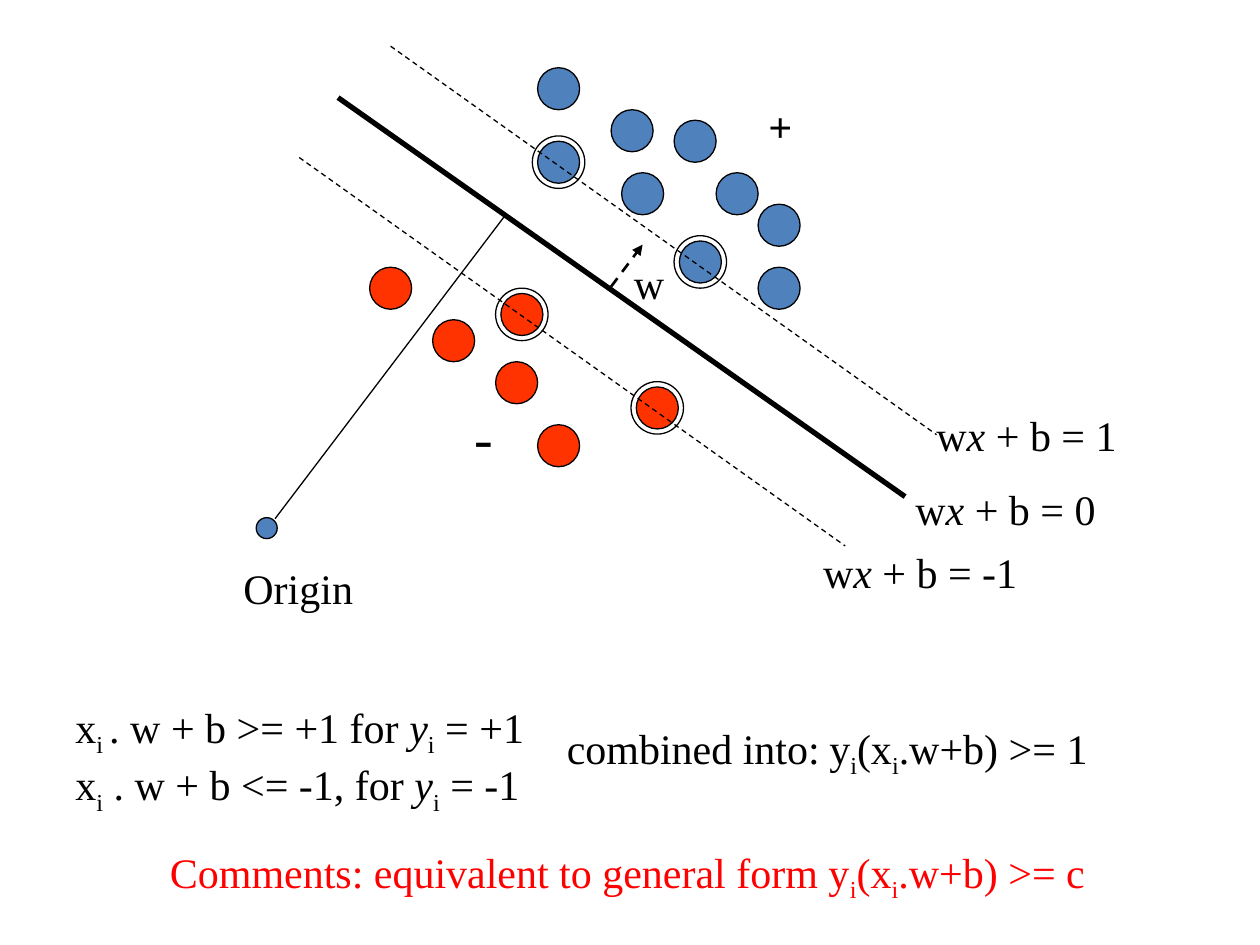
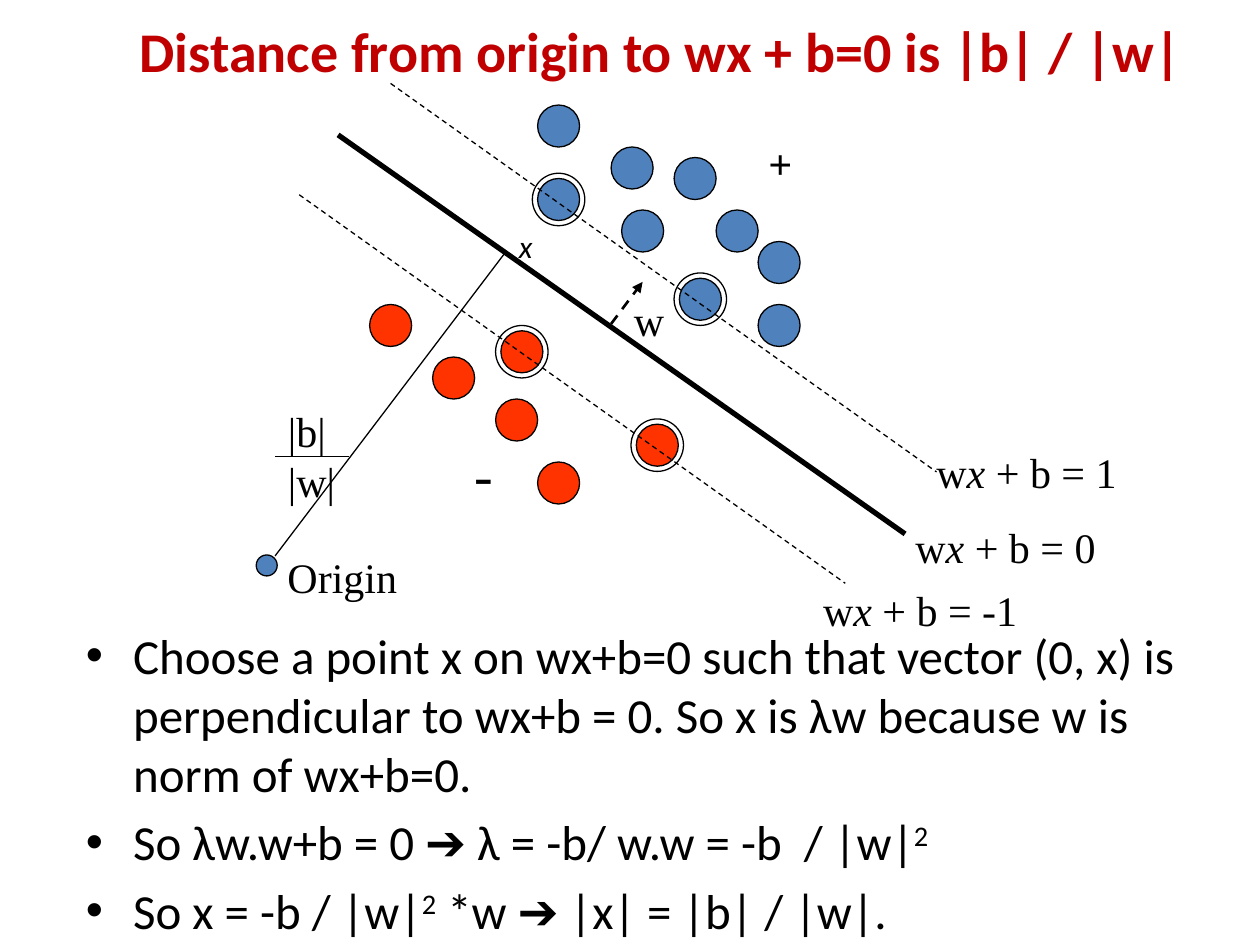
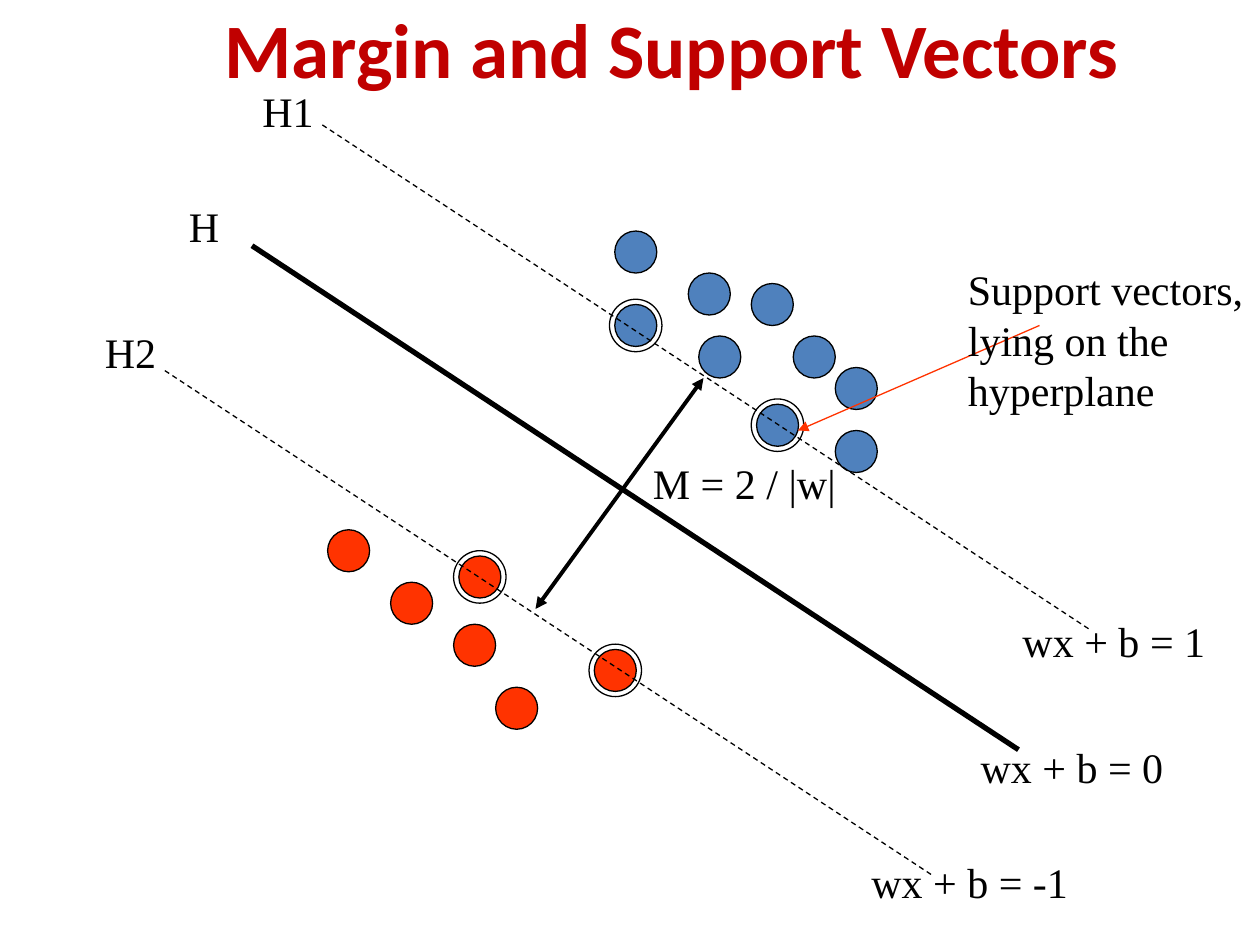
from dataclasses import dataclass
from typing import NamedTuple

from lxml import etree
from pptx import Presentation
from pptx.dml.color import RGBColor
from pptx.enum.dml import MSO_LINE
from pptx.enum.shapes import MSO_CONNECTOR, MSO_SHAPE
from pptx.enum.text import MSO_ANCHOR, MSO_AUTO_SIZE, PP_ALIGN
from pptx.oxml.ns import qn
from pptx.util import Inches, Pt

DASH = MSO_LINE.DASH
OVAL = MSO_SHAPE.OVAL
STRAIGHT = MSO_CONNECTOR.STRAIGHT
TOP, MIDDLE = MSO_ANCHOR.TOP, MSO_ANCHOR.MIDDLE
FIT, FIXED = MSO_AUTO_SIZE.SHAPE_TO_FIT_TEXT, MSO_AUTO_SIZE.NONE
LEFT, CENTER = PP_ALIGN.LEFT, PP_ALIGN.CENTER

# The slide is a grid of 120 columns by 90 rows
COLS, ROWS = 120, 90
WIDTH, HEIGHT = Inches(10), Inches(7.5)
DOT, RING, SPOT = 4, 5, 2
TITLE_ONLY, BLANK = 5, 6


@dataclass(frozen=True)
class Theme:
    ink: str = "000000"
    blue: str = "4F81BD"
    red: str = "FF3300"
    note: str = "FF0000"
    title: str = "C00000"
    serif: str = "Times New Roman"
    sans: str = "Calibri"
    small: float = 18
    label: float = 24
    body: float = 28
    large: float = 32
    head: float = 44
    thin: float = 0.75
    thick: float = 3


THEME = Theme()


class Point(NamedTuple):
    x: float
    y: float
    ringed: bool = False


class Label(NamedTuple):
    text: str
    x: float
    y: float
    w: float
    h: float = 6
    size: float = THEME.label
    font: str = THEME.serif
    color: str = THEME.ink
    bold: bool = False


class Line(NamedTuple):
    x: float
    y: float
    dx: float
    dy: float
    width: float = THEME.thin
    color: str = THEME.ink
    dash: bool = False
    ends: tuple = ()


# Both classes of points, each from the left top of its cloud
BLUES = [Point(0, 0), Point(0, 7, True), Point(7, 4), Point(13, 5), Point(8, 10),
         Point(17, 10), Point(13.5, 16.5, True), Point(21, 13), Point(21, 19)]
REDS = [Point(12.5, 2.5, True), Point(25.4, 11.4, True), Point(12, 9),
        Point(16, 15), Point(6, 5), Point(0, 0)]

# The diagram of the first two slides
PLANE_LINES = [
    Line(32.2, 9.3, 54, 38, width=THEME.thick),
    Line(58.2, 27.3, 3, -4, width=1.5, dash=True, ends=("tailEnd",)),
    Line(37.2, 4.4, 52, 37, dash=True),
    Line(28.5, 15, 52, 37, dash=True),
    Line(26.2, 49.4, 22, -29),
]
PLANE_LABELS = [
    Label("w", 59.2, 23.9, 5.3),
    Label("w`/x` + b = 0", 86, 45.5, 20),
    Label("w`/x` + b = 1", 88, 38.4, 20),
    Label("w`/x` + b = -1", 77.2, 51.5, 21),
    Label("+", 72, 9, 4.7, bold=True),
    Label("-", 44, 37.7, 4.2, 7.5, size=THEME.large),
]


def col(n: float) -> int:
    return round(WIDTH * n / COLS)


def row(n: float) -> int:
    return round(HEIGHT * n / ROWS)


def frame(x: float, y: float, w: float, h: float) -> tuple:
    return col(x), row(y), col(w), row(h)


# Text: `_sub`, `^super` and `/italic` mark a part
def write(para, text: str, *, size: float = THEME.label, font: str = THEME.serif,
          color: str = THEME.ink, bold: bool = False, align=LEFT) -> None:
    para.alignment = align
    for n, part in enumerate(text.split("`")):
        mark, part = (part[0], part[1:]) if n % 2 else ("", part)
        if not part:
            continue
        run = para.add_run()
        run.text = part
        face = run.font
        face.size, face.name, face.bold = Pt(size), font, bold
        face.italic = mark == "/"
        face.color.rgb = RGBColor.from_string(color)
        if mark in ("_", "^"):
            shift = "-25000" if mark == "_" else "30000"
            run._r.get_or_add_rPr().set("baseline", shift)


def add_label(slide, item: Label, drop: float = 0) -> None:
    box = slide.shapes.add_textbox(*frame(item.x, item.y + drop, item.w, item.h))
    area = box.text_frame
    area.word_wrap, area.auto_size = False, FIT
    for n, text in enumerate(item.text.split("\n")):
        para = area.add_paragraph() if n else area.paragraphs[0]
        write(para, text, size=item.size, font=item.font, color=item.color,
              bold=item.bold)


def add_title(slide, text: str, place: tuple, *, size: float, align, anchor,
              wrap: bool) -> None:
    title = slide.shapes.title
    title.left, title.top, title.width, title.height = frame(*place)
    area = title.text_frame
    area.word_wrap, area.auto_size, area.vertical_anchor = wrap, FIXED, anchor
    write(area.paragraphs[0], text, size=size, font=THEME.sans,
          color=THEME.title, bold=True, align=align)


def add_list(slide, lines: list[str], place: tuple) -> None:
    area = slide.shapes.add_textbox(*frame(*place)).text_frame
    area.word_wrap = True
    for n, text in enumerate(lines):
        para = area.add_paragraph() if n else area.paragraphs[0]
        para.space_before = Pt(THEME.body * 0.2)
        write(para, text, size=THEME.body, font=THEME.sans)
        props = para._p.get_or_add_pPr()
        props.set("marL", str(col(4.5)))
        props.set("indent", str(-col(4.5)))
        etree.SubElement(props, qn("a:buFont")).set("typeface", "Arial")
        etree.SubElement(props, qn("a:buChar")).set("char", "•")


# Shapes
def add_disc(slide, x: float, y: float, size: float, fill: str = "") -> None:
    disc = slide.shapes.add_shape(OVAL, *frame(x, y, size, size))
    disc.shadow.inherit = False
    if fill:
        disc.fill.solid()
        disc.fill.fore_color.rgb = RGBColor.from_string(fill)
    else:
        disc.fill.background()
    disc.line.color.rgb = RGBColor.from_string(THEME.ink)
    disc.line.width = Pt(THEME.thin)


def add_cloud(slide, points: list[Point], x: float, y: float, fill: str) -> None:
    gap = (RING - DOT) / 2
    for point in points:
        add_disc(slide, x + point.x, y + point.y, DOT, fill)
        if point.ringed:
            add_disc(slide, x + point.x - gap, y + point.y - gap, RING)


def add_line(slide, item: Line, drop: float = 0) -> None:
    x, y = item.x, item.y + drop
    line = slide.shapes.add_connector(
        STRAIGHT, col(x), row(y), col(x + item.dx), row(y + item.dy))
    line.line.color.rgb = RGBColor.from_string(item.color)
    line.line.width = Pt(item.width)
    if item.dash:
        line.line.dash_style = DASH
    for end in item.ends:
        etree.SubElement(line.line._get_or_add_ln(), qn(f"a:{end}")).set(
            "type", "triangle")
    etree.SubElement(line._element.spPr, qn("a:effectLst"))


def add_plane(slide, drop: float = 0) -> None:
    add_cloud(slide, BLUES, 51.2, 6.45 + drop, THEME.blue)
    add_cloud(slide, REDS, 35.2, 25.45 + drop, THEME.red)
    for line in PLANE_LINES:
        add_line(slide, line, drop)
    add_disc(slide, 24.4, 49.3 + drop, SPOT, THEME.blue)
    for label in PLANE_LABELS:
        add_label(slide, label, drop)


# Slides
def draw_rules(slide) -> None:
    add_plane(slide)
    for label in (
        Label("Origin", 22, 53, 13),
        Label("x`_i `. w + b >= +1 for `/y``_i` = +1\n"
              "x`_i` . w + b <= -1, for `/y``_i` = -1", 6, 66.2, 45.5, 10.8),
        Label("combined into:", 52.8, 68.2, 27.6),
        Label("y`_i`(x`_i`.w+b) >= 1", 77.8, 68.2, 28.5),
        Label("Comments: equivalent to general form y`_i`(x`_i`.w+b) >= c",
              15, 80, 92, color=THEME.note),
    ):
        add_label(slide, label)


def draw_length(slide) -> None:
    add_title(slide, "Distance from origin to wx + b=0 is |b| / |w|",
              (12.1, 1, 102.8, 14.2), size=THEME.large, align=LEFT,
              anchor=TOP, wrap=False)
    add_list(slide, [
        "Choose a point x on wx+b=0 such that vector (0, x) is perpendicular "
        "to wx+b = 0. So x is λw because w is norm of wx+b=0.",
        "So λw.w+b = 0 ➔ λ = -b/ w.w = -b  / |w|`^2`",
        "So x = -b / |w|`^2` *w ➔ |x| = |b| / |w|.",
    ], (7, 59, 109, 29))
    add_plane(slide, drop=3.55)
    add_label(slide, Label("Origin", 26.2, 51.95, 13))
    add_label(slide, Label("|b|\n|w|", 26.25, 38, 7.2, 10.8))
    add_line(slide, Line(26.2, 43.5, 7, 0))
    add_label(slide, Label("`/x`", 48.25, 21, 3.8, 4.8, size=THEME.small,
                           font=THEME.sans))


def draw_margin(slide) -> None:
    add_title(slide, "Margin and Support Vectors", (13, -3, 102, 15),
              size=THEME.head, align=CENTER, anchor=MIDDLE, wrap=True)
    add_cloud(slide, BLUES, 58.55, 22, THEME.blue)
    add_cloud(slide, REDS, 31.2, 50.45, THEME.red)
    for line in (
        Line(24, 23.4, 73, 48, width=THEME.thick),
        Line(15.7, 35.3, 73, 48, dash=True),
        Line(30.7, 11.9, 73, 48, dash=True),
        Line(51, 58, 16, -22, width=2.25, ends=("headEnd", "tailEnd")),
        Line(99, 31, -23, 10, color=THEME.red, ends=("tailEnd",)),
    ):
        add_line(slide, line)
    for label in (
        Label("wx + b = 1", 96.2, 58, 20),
        Label("wx + b = 0", 92.2, 70, 20),
        Label("wx + b = -1", 81.8, 81, 21.3),
        Label("M = 2 / |w|", 61, 43, 20),
        Label("Support vectors,\nlying on the\nhyperplane", 91, 24.55, 28.8, 15.6),
        Label("H1", 23.8, 7.6, 7.4),
        Label("H2", 8.8, 30.55, 7.4),
        Label("H", 16.8, 18.55, 5.4),
    ):
        add_label(slide, label)


def main() -> None:
    deck = Presentation()
    deck.slide_width, deck.slide_height = WIDTH, HEIGHT
    for draw, kind in ((draw_rules, BLANK), (draw_length, TITLE_ONLY),
                       (draw_margin, TITLE_ONLY)):
        draw(deck.slides.add_slide(deck.slide_layouts[kind]))
    deck.save("out.pptx")


if __name__ == "__main__":
    main()
